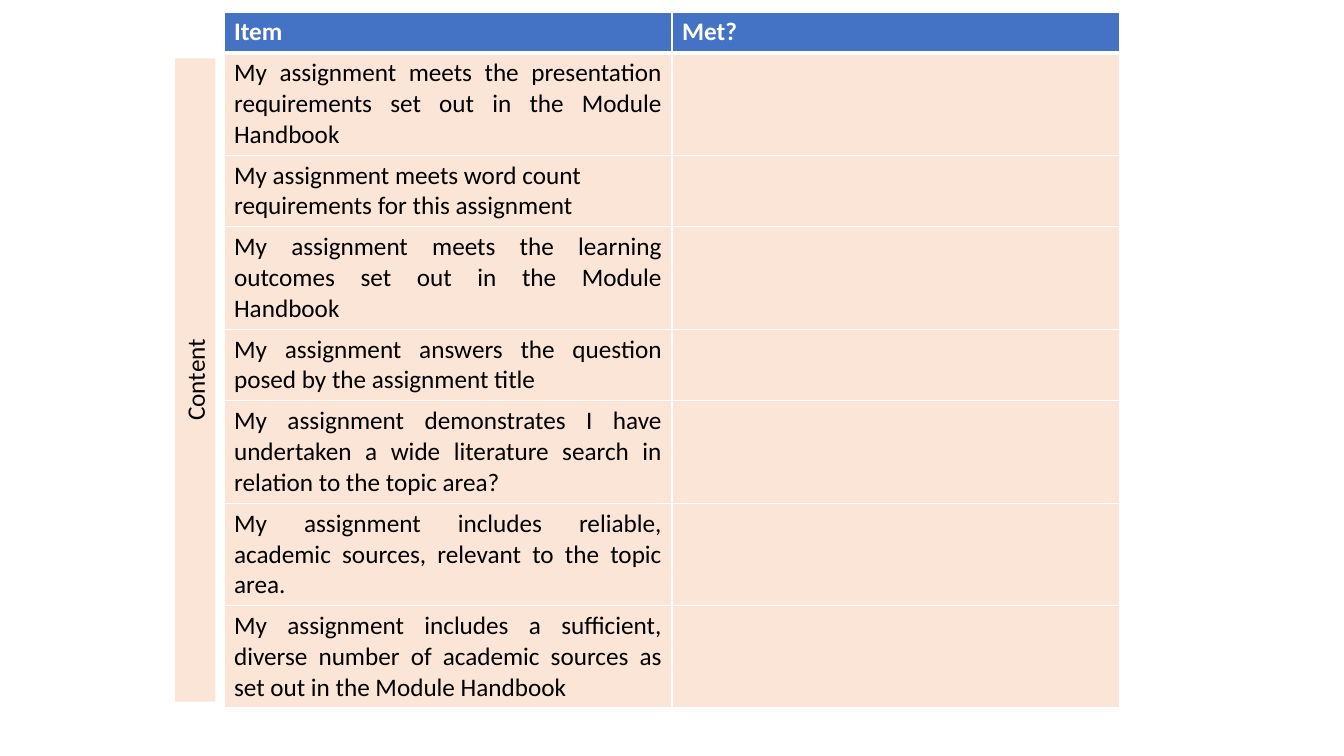
import pptx
import pptx.util
import pptx.dml.color
import pptx.enum.shapes
import pptx.enum.text
from lxml import etree

Pt = pptx.util.Pt
Align = pptx.enum.text.PP_ALIGN
Anchor = pptx.enum.text.MSO_ANCHOR

BLUE, PEACH, WHITE, BLACK = "4472C4", "FBE5D6", "FFFFFF", "000000"
HEADS = ["Item", "Met?"]
# Text, alignment, lines of text in the row
ITEMS = [
    ("My assignment meets the presentation requirements set out in the Module Handbook",
     Align.JUSTIFY, 3),
    ("My assignment meets word count requirements for this assignment", Align.LEFT, 2),
    ("My assignment meets the learning outcomes set out in the Module Handbook",
     Align.JUSTIFY, 3),
    ("My assignment answers the question posed by the assignment title", Align.JUSTIFY, 2),
    ("My assignment demonstrates I have undertaken a wide literature search in relation "
     "to the topic area?", Align.JUSTIFY, 3),
    ("My assignment includes reliable, academic sources, relevant to the topic area.",
     Align.JUSTIFY, 3),
    ("My assignment includes a sufficient, diverse number of academic sources as set out "
     "in the Module Handbook", Align.JUSTIFY, 3),
]
SIDE = "Content"

LEFT, TOP, COL = 160, 8.5, 320
HEAD_H = 29.2
ROW_H = {2: 50.4, 3: 72}
SIDE_X, SIDE_Y = 139.4, 271.4  # centre of the side label
SIDE_LEN, SIDE_H = 459.4, 29.1


def color(hexa):
    return pptx.dml.color.RGBColor.from_string(hexa)


def paint(part, hexa):
    part.fill.solid()
    part.fill.fore_color.rgb = color(hexa)


def write(frame, text, ink=BLACK, bold=False, align=Align.LEFT):
    para = frame.paragraphs[0]
    para.alignment = align
    run = para.add_run()
    run.text = text
    font = run.font
    font.name, font.size, font.bold = "Calibri", Pt(18), bold
    font.color.rgb = color(ink)


def edge(cell, **widths):
    """Draw white borders; widths are in points, by side L, R, T, B."""
    ns = "{http://schemas.openxmlformats.org/drawingml/2006/main}"
    props = cell._tc.get_or_add_tcPr()
    for side, width in widths.items():
        line = etree.SubElement(props, f"{ns}ln{side}", w=str(Pt(width)))
        fill = etree.SubElement(line, ns + "solidFill")
        etree.SubElement(fill, ns + "srgbClr", val=WHITE)


def add_list(slide):
    heights = [HEAD_H] + [ROW_H[lines] for _, _, lines in ITEMS]
    table = slide.shapes.add_table(
        len(heights), len(HEADS), Pt(LEFT), Pt(TOP),
        Pt(COL * len(HEADS)), Pt(sum(heights))).table
    for col in table.columns:
        col.width = Pt(COL)
    for r, height in enumerate(heights):
        table.rows[r].height = Pt(height)
        for c in range(len(HEADS)):
            cell = table.cell(r, c)
            edge(cell, L=1, R=1, T=3 if r == 1 else 1, B=3 if r == 0 else 1)
            paint(cell, BLUE if r == 0 else PEACH)
    for c, head in enumerate(HEADS):
        write(table.cell(0, c).text_frame, head, ink=WHITE, bold=True)
    for r, (text, align, _) in enumerate(ITEMS, 1):
        write(table.cell(r, 0).text_frame, text, align=align)


def add_side(slide):
    bar = slide.shapes.add_shape(
        pptx.enum.shapes.MSO_SHAPE.RECTANGLE,
        Pt(SIDE_X - SIDE_LEN / 2), Pt(SIDE_Y - SIDE_H / 2), Pt(SIDE_LEN), Pt(SIDE_H))
    bar.rotation = 270
    bar.shadow.inherit = False
    bar.line.fill.background()
    paint(bar, PEACH)
    frame = bar.text_frame
    frame.word_wrap = True
    frame.auto_size = pptx.enum.text.MSO_AUTO_SIZE.SHAPE_TO_FIT_TEXT
    frame.vertical_anchor = Anchor.TOP
    write(frame, SIDE, align=Align.CENTER)


def main():
    deck = pptx.Presentation()
    deck.slide_width, deck.slide_height = Pt(960), Pt(540)
    slide = deck.slides.add_slide(deck.slide_layouts[6])
    add_list(slide)
    add_side(slide)
    deck.save("out.pptx")


if __name__ == "__main__":
    main()
